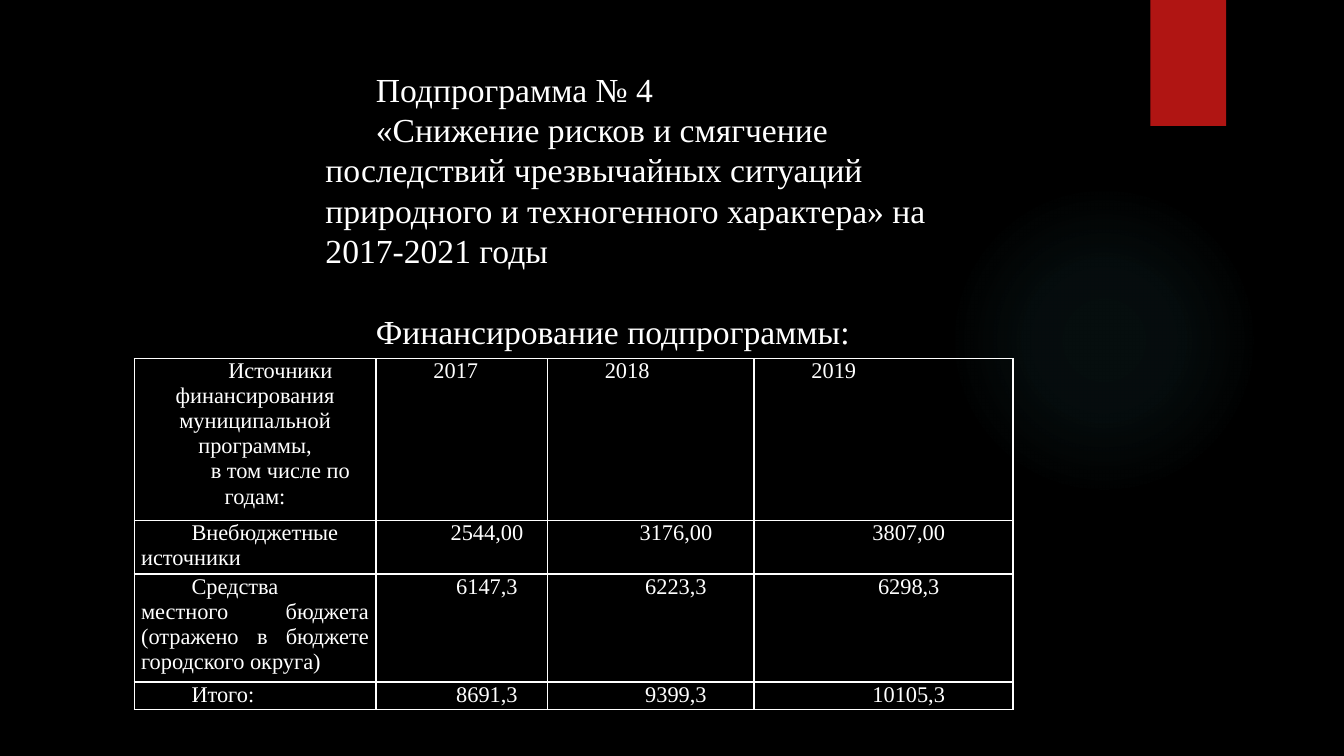
from lxml import etree
from pptx import Presentation
from pptx.dml.color import RGBColor
from pptx.enum import shapes, text
from pptx.oxml import parse_xml
from pptx.oxml.ns import nsdecls, qn
from pptx.util import Pt

# Content
HEADING = [
    "Подпрограмма № 4",
    "«Снижение рисков и смягчение последствий чрезвычайных ситуаций "
    "природного и техногенного характера» на 2017-2021 годы",
    "Финансирование подпрограммы:",
]
FUNDING = [
    ("Источники финансирования муниципальной программы,\nв том числе по годам:",
     "2017", "2018", "2019"),
    ("Внебюджетные источники", "2544,00", "3176,00", "3807,00"),
    ("Средства местного бюджета (отражено в бюджете городского округа)",
     "6147,3", "6223,3", "6298,3"),
    ("Итого:", "8691,3", "9399,3", "10105,3"),
]
COLUMN_WIDTHS = (172.8, 122.4, 147.6, 185)
ROW_HEIGHTS = (115.5, 38.3, 77.2, 19.4)

THEME = {
    "font": "Times New Roman",
    "back": "000000", "ink": "FFFFFF", "ribbon": "B01513", "glow": "50B9C1",
    "heading": 24, "heading_line": 28.8,
    "cell": 16, "cell_line": 17.9,
    "indent": 36, "rule": 1,
}
GLOW_STOPS = ((0, 7), (36, 6), (69, 0))  # position %, opacity %


def color(name):
    return RGBColor.from_string(THEME[name])


def style(paragraph, kind, align):
    """Indent the first line and set the type of one paragraph."""
    paragraph.alignment = align
    paragraph.line_spacing = Pt(THEME[kind + "_line"])
    properties = paragraph._p.get_or_add_pPr()
    properties.set("marL", "0")
    properties.set("indent", str(Pt(THEME["indent"])))
    for run in paragraph.runs:
        run.font.name = THEME["font"]
        run.font.size = Pt(THEME[kind])
        run.font.color.rgb = color("ink")


def add_plain(slide, preset, left, top, width, height):
    shape = slide.shapes.add_shape(preset, Pt(left), Pt(top), Pt(width), Pt(height))
    shape.shadow.inherit = False
    shape.line.fill.background()
    return shape


def add_glow(slide):
    glow = add_plain(slide, shapes.MSO_SHAPE.OVAL, 677.5, 131.8, 221.8, 221.8)
    glow.fill.background()
    stops = "".join(
        f'<a:gs pos="{pos * 1000}"><a:srgbClr val="{THEME["glow"]}">'
        f'<a:alpha val="{alpha * 1000}"/></a:srgbClr></a:gs>'
        for pos, alpha in GLOW_STOPS)
    gradient = parse_xml(
        f'<a:gradFill {nsdecls("a")}><a:gsLst>{stops}</a:gsLst><a:path path="circle">'
        '<a:fillToRect l="50000" t="50000" r="50000" b="50000"/></a:path></a:gradFill>')
    properties = glow._element.spPr
    properties.replace(properties.find(qn("a:noFill")), gradient)


def add_ribbon(slide):
    ribbon = add_plain(slide, shapes.MSO_SHAPE.RECTANGLE, 821.8, 0, 54, 90)
    ribbon.fill.solid()
    ribbon.fill.fore_color.rgb = color("ribbon")
    ribbon._element.spPr.find(qn("a:effectLst")).append(parse_xml(
        f'<a:outerShdw {nsdecls("a")} blurRad="{Pt(3)}" dist="{Pt(2)}" dir="5400000">'
        '<a:srgbClr val="000000"><a:alpha val="45000"/></a:srgbClr></a:outerShdw>'))


def add_heading(slide):
    frame = slide.shapes.add_textbox(Pt(225.4), Pt(45.4), Pt(480.2), Pt(208.8)).text_frame
    frame.word_wrap = True
    frame.text = "\n".join(HEADING)
    for paragraph in frame.paragraphs:
        style(paragraph, "heading", text.PP_ALIGN.LEFT)
    frame.paragraphs[-1].space_before = Pt(THEME["heading_line"])


def add_borders(cell):
    """Rule all four sides; border elements precede the cell fill."""
    properties = cell._tc.get_or_add_tcPr()
    for position, side in enumerate(("lnL", "lnR", "lnT", "lnB")):
        border = etree.Element(qn("a:" + side), w=str(Pt(THEME["rule"])))
        fill = etree.SubElement(border, qn("a:solidFill"))
        etree.SubElement(fill, qn("a:srgbClr"), val=THEME["ink"])
        properties.insert(position, border)


def add_funding(slide):
    table = slide.shapes.add_table(
        len(FUNDING), len(COLUMN_WIDTHS), Pt(95.8), Pt(256.2),
        Pt(sum(COLUMN_WIDTHS)), Pt(sum(ROW_HEIGHTS))).table
    table.first_row = table.horz_banding = False
    for column, width in zip(table.columns, COLUMN_WIDTHS):
        column.width = Pt(width)
    for row, height in zip(table.rows, ROW_HEIGHTS):
        row.height = Pt(height)
    for r, entries in enumerate(FUNDING):
        for c, entry in enumerate(entries):
            cell = table.cell(r, c)
            cell.margin_left = cell.margin_right = Pt(5)
            cell.margin_top = cell.margin_bottom = 0
            cell.fill.background()
            add_borders(cell)
            cell.text_frame.text = entry
            # Top-left cell and figures are centred; years and labels justified
            centred = (r == 0) == (c == 0)
            align = text.PP_ALIGN.CENTER if centred else text.PP_ALIGN.JUSTIFY
            for paragraph in cell.text_frame.paragraphs:
                style(paragraph, "cell", align)


def main():
    deck = Presentation()
    deck.slide_width, deck.slide_height = Pt(960), Pt(540)
    slide = deck.slides.add_slide(deck.slide_layouts[6])
    slide.background.fill.solid()
    slide.background.fill.fore_color.rgb = color("back")
    add_glow(slide)
    add_ribbon(slide)
    add_funding(slide)
    add_heading(slide)
    deck.save("out.pptx")


if __name__ == "__main__":
    main()
